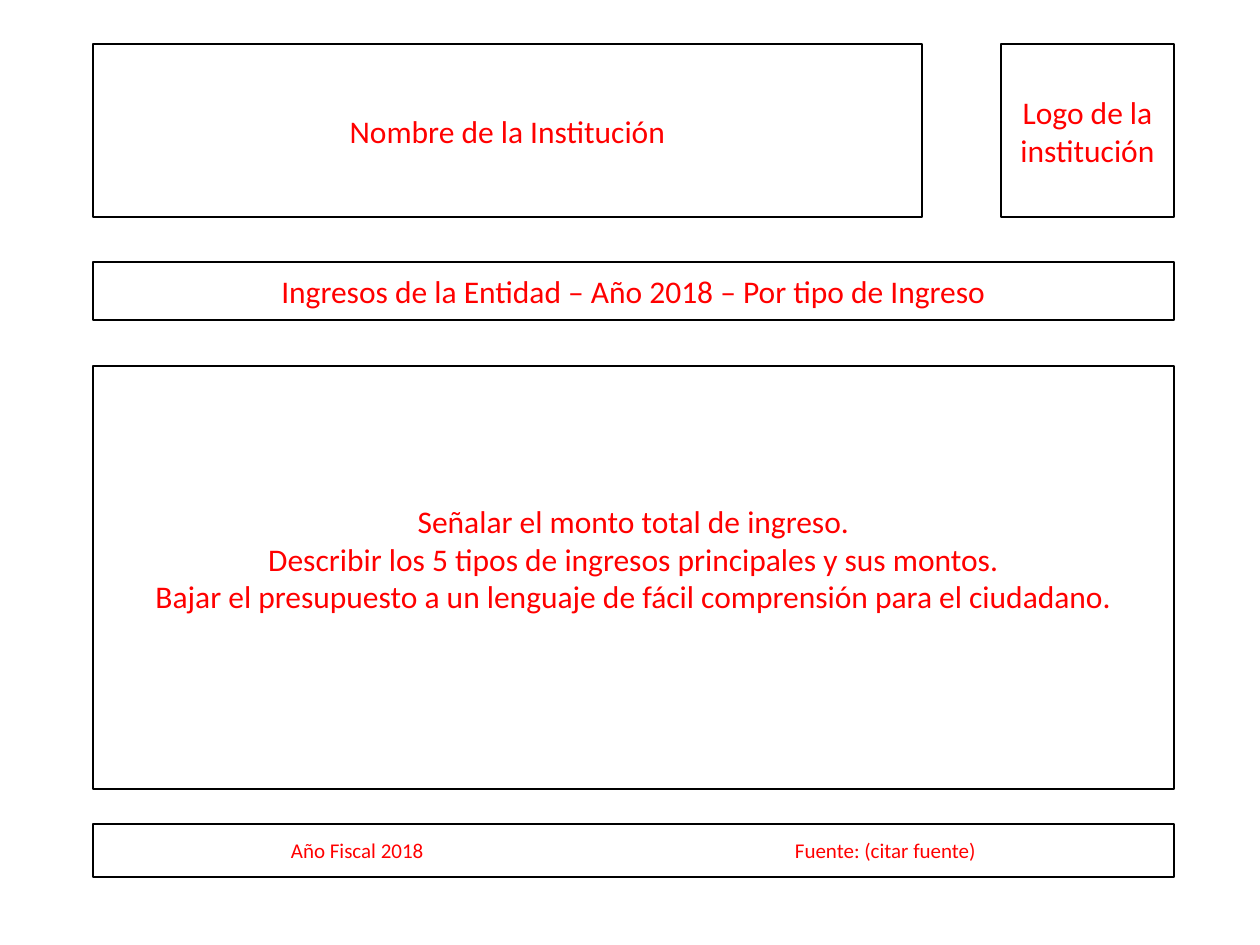
import pptx
import pptx.dml.color
import pptx.enum.shapes
import pptx.enum.text
import pptx.oxml
import pptx.oxml.ns
import pptx.util

INK = {"line": "000000", "text": "FF0000", "page": "FFFFFF"}
FONT = "Calibri"
LEFT, WIDE = 93, 1081


def px(num):
    return pptx.util.Emu(round(num * 914400 / 126))


def hue(name):
    return pptx.dml.color.RGBColor.from_string(INK[name])


def place(shape, box):
    shape.left, shape.top, shape.width, shape.height = map(px, box)


def dress(shape, lines, size=18, align="CENTER", left=13, low=6):
    shape.fill.background()
    shape.line.color.rgb = hue("line")
    shape.line.width = pptx.util.Pt(1)
    frame = shape.text_frame
    frame.word_wrap = True
    frame.auto_size = pptx.enum.text.MSO_AUTO_SIZE.NONE
    frame.vertical_anchor = pptx.enum.text.MSO_ANCHOR.MIDDLE
    frame.margin_left, frame.margin_right = px(left), px(13)
    frame.margin_top, frame.margin_bottom = px(6), px(low)
    for i, line in enumerate(lines):
        para = frame.paragraphs[0] if i == 0 else frame.add_paragraph()
        para.alignment = getattr(pptx.enum.text.PP_ALIGN, align)
        run = para.add_run()
        run.text = line
        run.font.name = FONT
        run.font.size = pptx.util.Pt(size)
        run.font.color.rgb = hue("text")


def panel(slide, box, lines, **style):
    kind = pptx.enum.shapes.MSO_SHAPE.RECTANGLE
    shape = slide.shapes.add_shape(kind, *map(px, box))
    shape.shadow.inherit = False
    dress(shape, lines, **style)
    return shape


def header(slide, box):
    x, y, w, h = box
    gap = 79
    panel(slide, (x + w - h, y, h, h), ["Logo de la institución"])
    panel(slide, (x, y, w - h - gap, h), ["Nombre de la Institución"])


def title(slide, box):
    shape = slide.shapes.title
    place(shape, box)
    dress(shape, ["Ingresos de la Entidad – Año 2018 – Por tipo de Ingreso"])


def body(slide, box):
    panel(slide, box, [
        "Señalar el monto total de ingreso.",
        "Describir los 5 tipos de ingresos principales y sus montos.",
        "Bajar el presupuesto a un lenguaje de fácil comprensión para el ciudadano.",
    ], low=44)


def footer(slide, box):
    shape = panel(slide, box, ["Año Fiscal 2018\tFuente: (citar fuente)"],
                  size=12, align="LEFT", left=198)
    props = shape.text_frame.paragraphs[0]._p.get_or_add_pPr()
    tabs = pptx.oxml.parse_xml(
        f'<a:tabLst {pptx.oxml.ns.nsdecls("a")}>'
        f'<a:tab pos="{px(504)}" algn="l"/></a:tabLst>')
    props.append(tabs)


def main():
    deck = pptx.Presentation()
    deck.slide_width, deck.slide_height = px(1260), px(945)
    slide = deck.slides.add_slide(deck.slide_layouts[5])
    slide.background.fill.solid()
    slide.background.fill.fore_color.rgb = hue("page")
    header(slide, (LEFT, 44, WIDE, 173))
    title(slide, (LEFT, 262, WIDE, 58))
    body(slide, (LEFT, 366, WIDE, 423))
    footer(slide, (LEFT, 824, WIDE, 53))
    deck.save("out.pptx")


if __name__ == "__main__":
    main()
